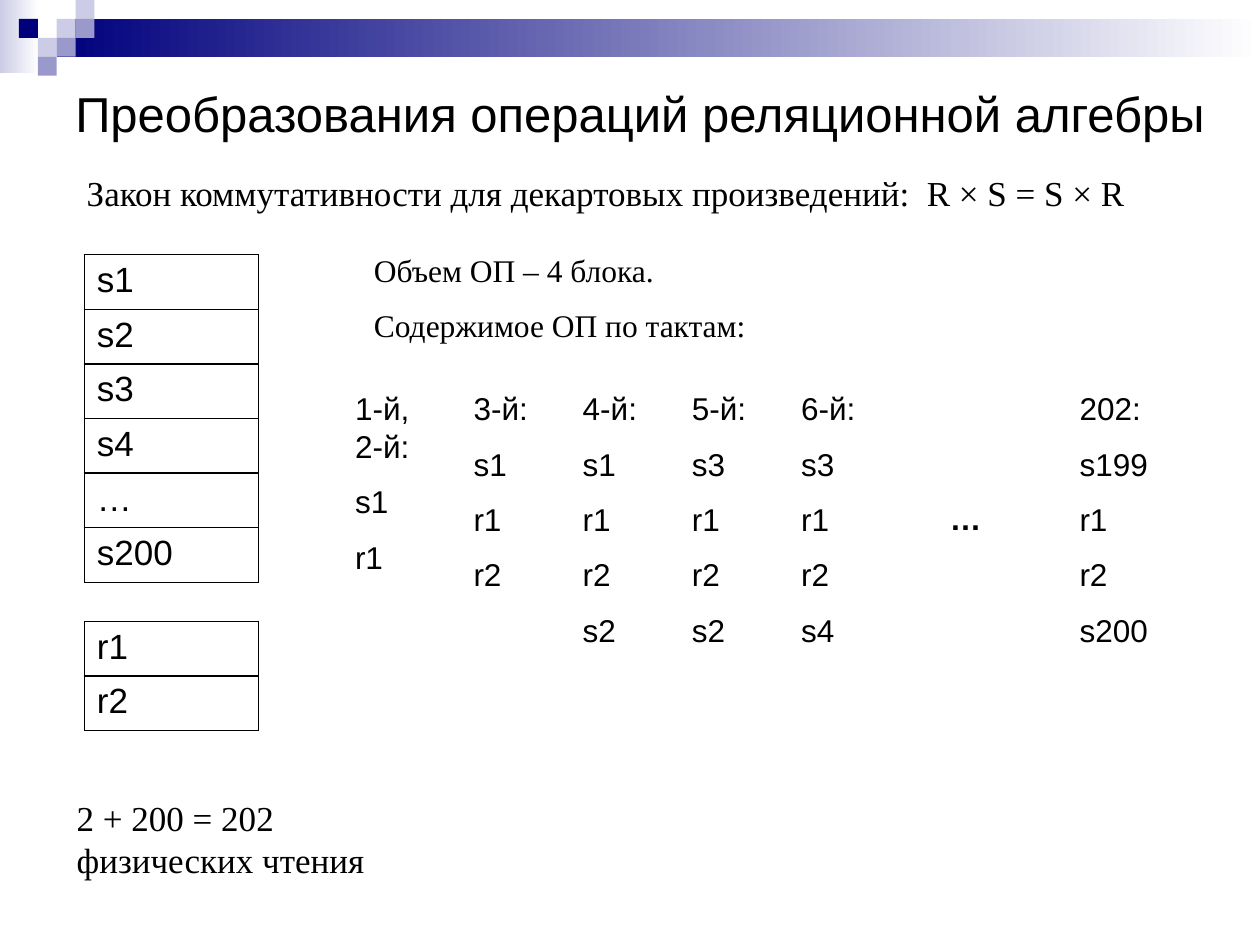
from dataclasses import dataclass

from lxml.etree import SubElement
from pptx import Presentation
from pptx.dml.color import RGBColor as RGB
from pptx.enum.shapes import MSO_SHAPE as Shape
from pptx.enum.text import MSO_ANCHOR as Anchor
from pptx.oxml import parse_xml
from pptx.oxml.ns import nsdecls, qn
from pptx.util import Pt


@dataclass(frozen=True)
class Theme:
    """Colours, fonts and type sizes."""
    ink: str = "000000"
    navy: str = "00007D"
    mid: str = "9999CC"
    pale: str = "CCCCE6"
    white: str = "FFFFFF"
    sans: str = "Arial"
    serif: str = "Times New Roman"
    head: int = 28
    body: int = 20
    note: int = 18


T = Theme()
TILE = 10.8
BANDS = [(0, 0, 22.3, 41.8, T.pale), (32.4, 10.8, 687.6, 21.6, T.navy)]
TILES = [
    (3, 1, T.pale), (4, 0, T.pale), (4, 1, T.mid), (2, 2, T.pale),
    (1, 1, T.navy), (3, 2, T.mid), (2, 3, T.mid),
]
TITLE = ["Преобразования операций реляционной алгебры"]
LAW = ["Закон коммутативности для декартовых произведений:  R × S = S × R"]
TOTAL = ["2 + 200 = 202", "физических чтения"]
MEMORY = ["Объем ОП – 4 блока.", "Содержимое ОП по тактам:"]
BLOCKS = [
    (145.5, ["s1", "s2", "s3", "s4", "…", "s200"]),
    (355, ["r1", "r2"]),
]
FIRST = ["1-й, 2-й:", "s1", "r1"]
STEPS = [
    ["3-й:", "s1", "r1", "r2"],
    ["4-й:", "s1", "r1", "r2", "s2"],
    ["5-й:", "s3", "r1", "r2", "s2"],
    ["6-й:", "s3", "r1", "r2", "s4"],
]
LAST = ["202:", "s199", "r1", "r2", "s200"]
CELL_W, CELL_H = 99.5, 31.2
STEP_X, STEP_Y, STEP_GAP = 263.5, 218.9, 62.4


def write(frame, lines, size, font, gap=0, bold=False):
    """Fill a text frame, one paragraph per line."""
    for i, line in enumerate(lines):
        para = frame.add_paragraph() if i else frame.paragraphs[0]
        para.space_before = Pt(gap if i else 0)
        run = para.add_run()
        run.text = line
        run.font.size = Pt(size)
        run.font.name = font
        run.font.bold = bold
        run.font.color.rgb = RGB.from_string(T.ink)


def label(slide, spot, lines, size, font, gap=0, bold=False):
    """Add a wrapped text box."""
    frame = slide.shapes.add_textbox(*map(Pt, spot)).text_frame
    frame.word_wrap = True
    write(frame, lines, size, font, gap, bold)
    return frame


def block(slide, spot, shade, fade=False):
    """Add a plain rectangle, solid or fading to white."""
    box = slide.shapes.add_shape(Shape.RECTANGLE, *map(Pt, spot))
    box.shadow.inherit = False
    box.line.fill.background()
    if fade:
        box.fill.gradient()
        box.fill.gradient_angle = 0
        for stop, tint in zip(box.fill.gradient_stops, (shade, T.white)):
            stop.color.rgb = RGB.from_string(tint)
    else:
        box.fill.solid()
        box.fill.fore_color.rgb = RGB.from_string(shade)


def border(cell):
    """Draw a thin line on every side of a cell."""
    props = cell._tc.get_or_add_tcPr()
    for i, side in enumerate("LRTB"):
        line = parse_xml(f'<a:ln{side} {nsdecls("a")} w="12700"/>')
        fill = SubElement(line, qn("a:solidFill"))
        SubElement(fill, qn("a:srgbClr"), val=T.ink)
        props.insert(i, line)


def record(slide, top, text):
    """Add a one-cell table holding a block name."""
    spot = map(Pt, (48.2, top, CELL_W, CELL_H))
    table = slide.shapes.add_table(1, 1, *spot).table
    table.first_row = table.horz_banding = False
    cell = table.cell(0, 0)
    cell.fill.background()
    border(cell)
    write(cell.text_frame, [text], T.body, T.sans)


def main():
    """Build the slide and save it."""
    deck = Presentation()
    deck.slide_width, deck.slide_height = Pt(720), Pt(540)
    slide = deck.slides.add_slide(deck.slide_layouts[6])
    for *spot, shade in BANDS:
        block(slide, spot, shade, fade=True)
    for col, row, shade in TILES:
        block(slide, (col * TILE, row * TILE, TILE, TILE), shade)

    title = label(slide, (36, 36, 669.6, 56.9), TITLE, T.head, T.sans)
    title.vertical_anchor = Anchor.MIDDLE
    label(slide, (42.5, 94.3, 640, 31), LAW, T.body, T.serif)
    label(slide, (36.7, 451.4, 187.2, 55.4), TOTAL, T.body, T.serif)

    for top, names in BLOCKS:
        for i, name in enumerate(names):
            record(slide, top + i * CELL_H, name)

    spots = [(195.8, 51.1, FIRST)]
    spots += [(STEP_X + i * STEP_GAP, 56.9, s) for i, s in enumerate(STEPS)]
    spots += [(609.8, 73.4, LAST)]
    for left, wide, lines in spots:
        label(slide, (left, STEP_Y, wide, 159), lines, T.note, T.sans, 10)
    label(slide, (206.6, 139.7, 402.5, 61.2), MEMORY, T.note, T.serif, 10)
    label(slide, (535.7, 281.5, 33.8, 28.8), ["…"], T.note, T.sans, bold=True)
    deck.save("out.pptx")


if __name__ == "__main__":
    main()
